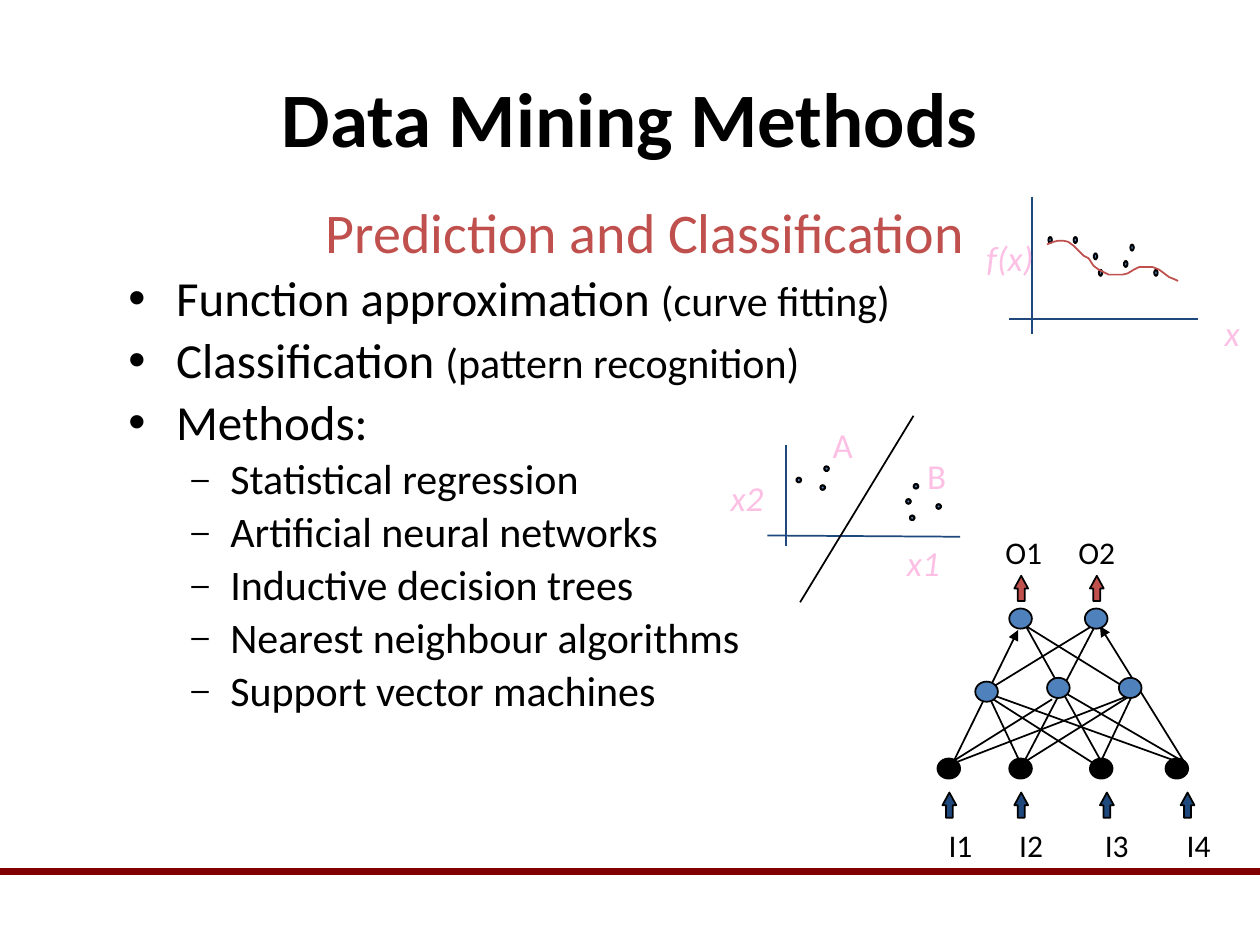
import pptx
import pptx.util
import pptx.dml.color
import pptx.enum.shapes
import pptx.enum.text
import pptx.oxml.xmlchemy

RGB = pptx.dml.color.RGBColor
SHAPE = pptx.enum.shapes.MSO_SHAPE
ALIGN = pptx.enum.text.PP_ALIGN
Pt = pptx.util.Pt

PX = 9144
FONT = "Calibri"
BLACK = RGB(0x00, 0x00, 0x00)
MAROON = RGB(0x80, 0x00, 0x00)
RED = RGB(0xC0, 0x50, 0x4D)
BLUE = RGB(0x4F, 0x81, 0xBD)
NAVY = RGB(0x1F, 0x49, 0x7D)
PINK = RGB(0xFD, 0xC0, 0xE5)


def px(*values):
    return [pptx.util.Emu(v * PX) for v in values]


def add_xml(parent, tag, **attrs):
    el = pptx.oxml.xmlchemy.OxmlElement(tag)
    for name, value in attrs.items():
        el.set(name, value)
    parent.append(el)


def set_font(font, size, color, italic=None, bold=None):
    font.name = FONT
    font.size = Pt(size)
    font.color.rgb = color
    font.italic = italic
    font.bold = bold


def add_line(shapes, x, y, ends, color=BLACK, width=1, arrow=False):
    x1, y1, x2, y2 = ends
    ln = shapes.add_connector(pptx.enum.shapes.MSO_CONNECTOR.STRAIGHT,
                              *px(x + x1, y + y1, x + x2, y + y2))
    ln.line.color.rgb = color
    ln.line.width = Pt(width)
    spPr = ln._element.spPr
    if arrow:
        add_xml(spPr.get_or_add_ln(), "a:headEnd", type="triangle")
    add_xml(spPr, "a:effectLst")


def add_filled(shapes, kind, left, top, width, height, fill):
    sp = shapes.add_shape(kind, *px(left, top, width, height))
    sp.shadow.inherit = False
    sp.fill.solid()
    sp.fill.fore_color.rgb = fill
    sp.line.color.rgb = BLACK
    sp.line.width = Pt(1)
    return sp


def add_label(shapes, text, left, top, width, height, size, color, italic=None):
    tf = shapes.add_textbox(*px(left, top, width, height)).text_frame
    tf.word_wrap = False
    tf.auto_size = pptx.enum.text.MSO_AUTO_SIZE.SHAPE_TO_FIT_TEXT
    p = tf.paragraphs[0]
    p.text = text
    set_font(p.font, size, color, italic)


def add_title(s, x, y, w, h):
    sp = s.shapes.title
    sp.left, sp.top, sp.width, sp.height = px(x, y, w, h)
    p = sp.text_frame.paragraphs[0]
    p.text = "Data Mining Methods"
    p.alignment = ALIGN.CENTER
    set_font(p.font, 44, BLACK, bold=True)


def add_body(s, x, y, w, h):
    tf = s.shapes.add_textbox(*px(x, y, w, h)).text_frame
    tf.word_wrap = True
    p = tf.paragraphs[0]
    p.text = "Prediction and Classification "
    p.alignment = ALIGN.CENTER
    p.line_spacing = 0.9
    set_font(p.font, 32, RED)

    topics = [("Function approximation ", "(curve fitting)"),
              ("Classification ", "(pattern recognition)"),
              ("Methods:",)]
    methods = ["Statistical regression", "Artificial neural networks",
               "Inductive decision trees", "Nearest neighbour algorithms",
               "Support vector machines"]
    for runs in topics:
        p = add_bullet(tf, "•", 38, 38, 100, 5, 28)
        for text, size in zip(runs, (28, 24)):
            r = p.add_run()
            r.text = text
            r.font.size = Pt(size)
    for text in methods:
        add_bullet(tf, "–", 81, 31, 75, 4.3, 24).text = text


def add_bullet(tf, char, margin, hang, percent, before, size):
    p = tf.add_paragraph()
    pPr = p._p.get_or_add_pPr()
    pPr.set("marL", str(margin * PX))
    pPr.set("indent", str(-hang * PX))
    add_xml(pPr, "a:buSzPct", val=str(percent * 1000))
    add_xml(pPr, "a:buFont", typeface="Arial")
    add_xml(pPr, "a:buChar", char=char)
    p.line_spacing = 0.9
    p.space_before = Pt(before)
    set_font(p.font, size, BLACK)
    return p


def add_network(s, x, y):
    shapes = s.shapes.add_group_shape().shapes
    arrow_edges = [(65, 82, 12, 190), (130, 79, 197, 187)]
    edges = [(69, 75, 133, 190), (126, 79, 68, 190), (156, 133, 129, 190),
             (43, 137, 68, 190), (99, 130, 197, 187), (92, 137, 12, 187),
             (43, 133, 193, 187), (156, 133, 8, 190), (65, 75, 152, 129),
             (130, 75, 42, 129), (39, 133, 133, 193), (156, 133, 65, 190)]
    for ends in arrow_edges:
        add_line(shapes, x, y, ends, arrow=True)
    for ends in edges:
        add_line(shapes, x, y, ends)

    outputs = [(58, 65), (118, 65)]
    hidden = [(31, 123), (88, 120), (145, 120)]
    inputs = [(left, 184) for left in (1, 58, 122, 182)]
    for nodes, fill in ((outputs + hidden, BLUE), (inputs, BLACK)):
        for left, top in nodes:
            add_filled(shapes, SHAPE.OVAL, x + left, y + top, 18, 16, fill)

    rows = [("I", NAVY, 211, (5, 62, 130, 194), 233, (0, 56, 124, 189), 48),
            ("O", RED, 39, (62, 122), 0, (45, 103), 61)]
    for prefix, fill, arrow_top, arrows, label_top, labels, width in rows:
        for i, (arrow, label) in enumerate(zip(arrows, labels), 1):
            sp = add_filled(shapes, SHAPE.UP_ARROW, x + arrow, y + arrow_top, 11, 20, fill)
            sp.adjustments[1] = 0.92
            add_label(shapes, f"{prefix}{i}", x + label, y + label_top, width, 50, 18, BLACK)


def add_axes_and_points(shapes, x, y, axes, points, width, height):
    for ends in axes:
        add_line(shapes, x, y, ends, NAVY)
    for left, top in points:
        add_filled(shapes, SHAPE.STAR_16_POINT, x + left, y + top, width, height, BLUE)


def add_curve_plot(s, x, y):
    shapes = s.shapes.add_group_shape().shapes
    points = [(59, 32), (79, 32), (95, 45), (99, 58), (119, 51), (124, 38), (143, 58)]
    add_axes_and_points(shapes, x, y, [(46, 0, 46, 109), (28, 97, 178, 97)], points, 3, 5)
    curve = [(58, 38), (63, 36), (67, 35), (71, 35), (75, 36), (79, 39), (83, 43),
             (87, 47), (91, 49), (95, 55), (99, 58), (103, 60), (107, 62), (112, 62),
             (118, 62), (122, 61), (127, 58), (131, 56), (136, 56), (142, 56),
             (147, 58), (151, 61), (155, 64), (160, 66), (162, 67)]
    start, *rest = [(x + cx, y + cy) for cx, cy in curve]
    fb = shapes.build_freeform(*start, scale=PX)
    fb.add_line_segments(rest, close=False)
    sp = fb.convert_to_shape()
    sp.shadow.inherit = False
    sp.fill.background()
    sp.line.color.rgb = RED
    sp.line.width = Pt(1)
    add_label(shapes, "f(x)", x, y + 27, 58, 43, 20, PINK, True)
    add_label(shapes, "x", x + 189, y + 86, 32, 43, 20, PINK, True)


def add_class_plot(s, x, y):
    shapes = s.shapes.add_group_shape().shapes
    points = [(62, 49), (84, 40), (81, 55), (152, 79), (149, 66), (155, 54), (173, 70)]
    add_axes_and_points(shapes, x, y, [(54, 23, 54, 103), (39, 95, 192, 96)], points, 4, 4)
    labels = [("x1", 140, 95, 46, True), ("x2", 0, 43, 46, True),
              ("A", 81, 1, 40, None), ("B", 156, 26, 38, None)]
    for text, left, top, width, italic in labels:
        add_label(shapes, text, x + left, y + top, width, 43, 20, PINK, italic)
    add_line(shapes, x, y, (65, 148, 155, 0))


def main():
    prs = pptx.Presentation()
    prs.slide_width, prs.slide_height = px(1000, 750)
    s = prs.slides.add_slide(prs.slide_layouts[5])
    add_line(s.shapes, 0, 692, (0, 0, 1000, 0), MAROON, 4)
    add_title(s, 50, 30, 900, 125)
    add_body(s, 92, 158, 850, 450)
    add_network(s, 743, 418)
    add_curve_plot(s, 773, 156)
    add_class_plot(s, 570, 330)
    prs.save("out.pptx")


if __name__ == "__main__":
    main()
